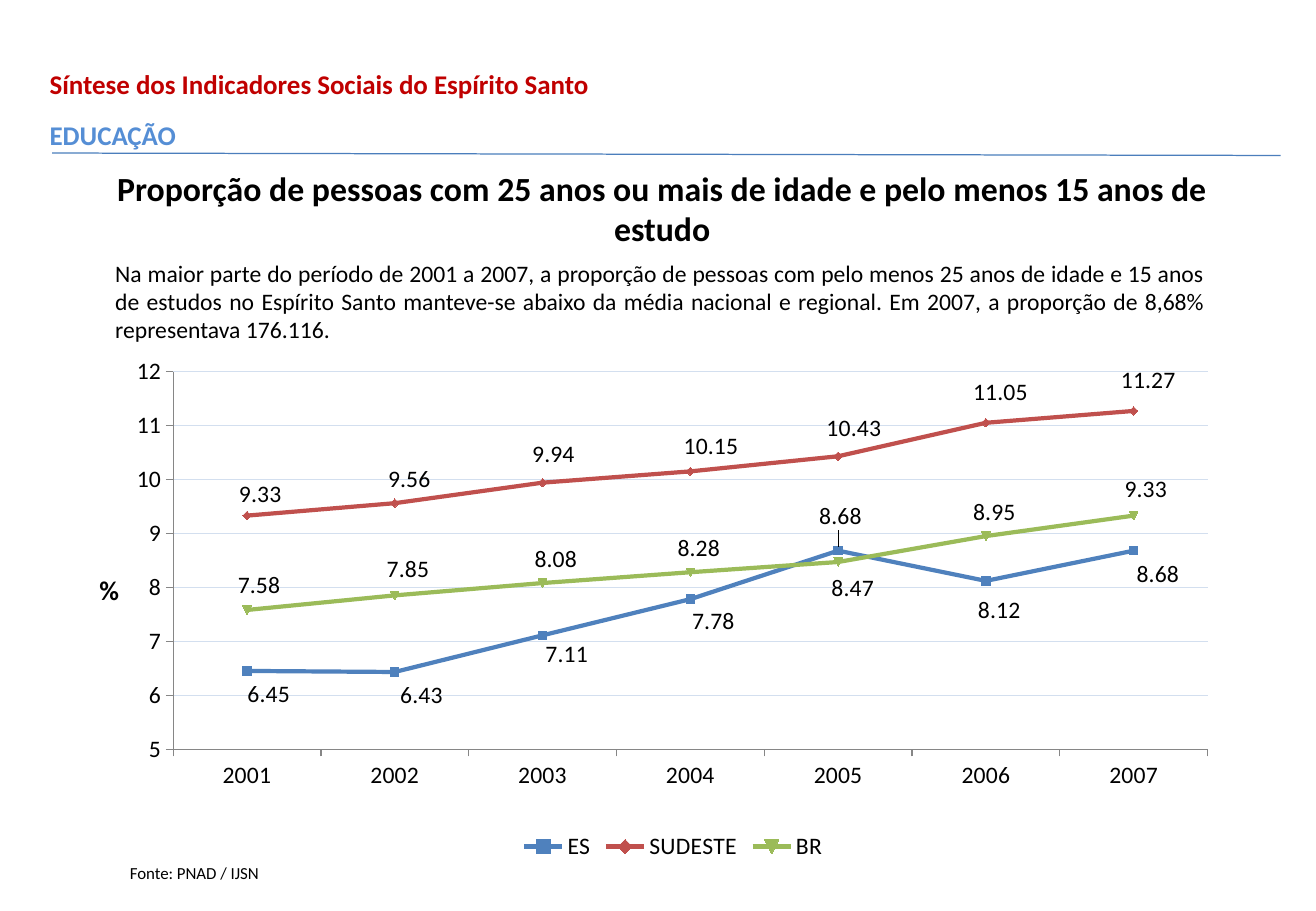
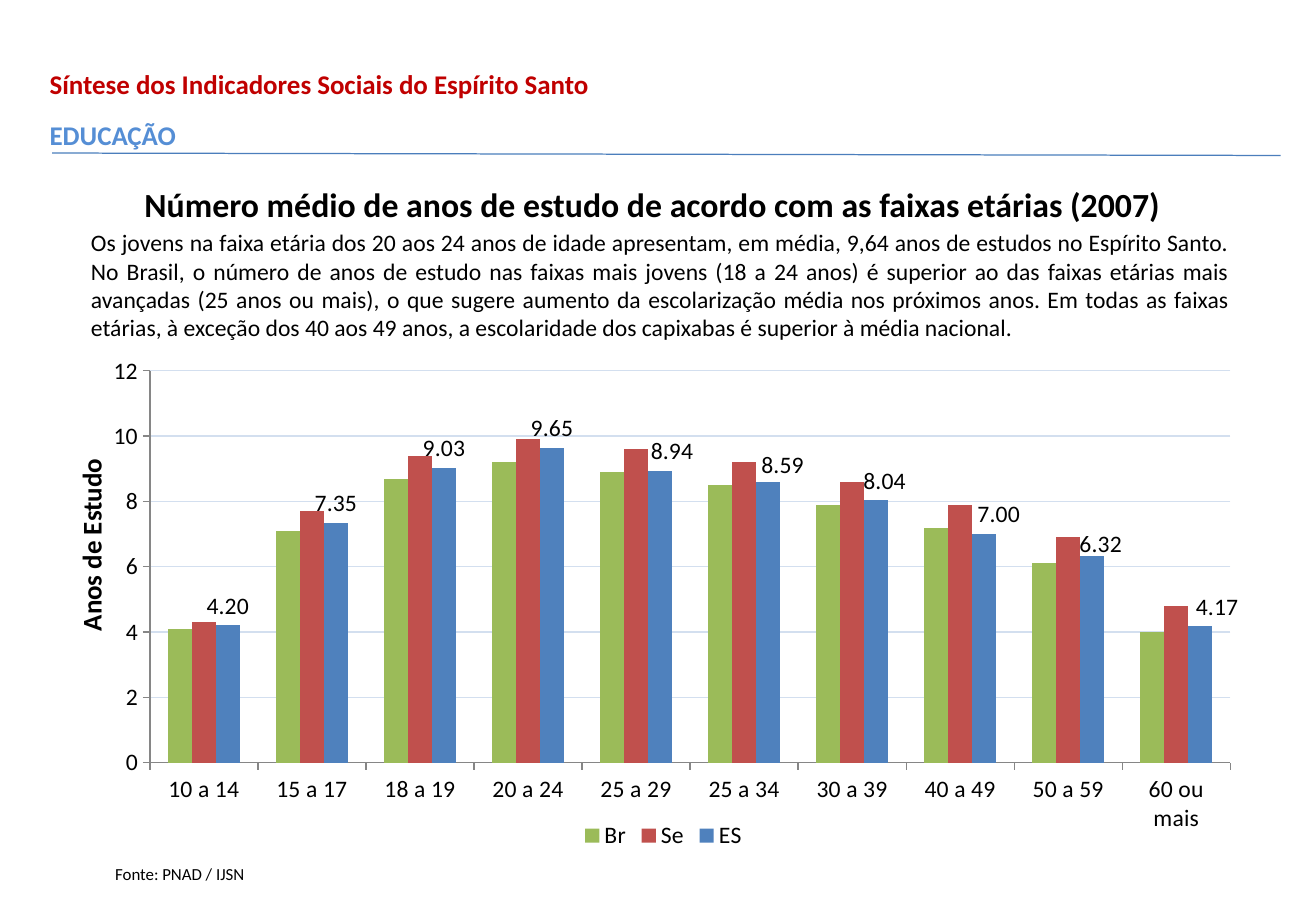
import lxml.etree
import pptx
import pptx.chart.data
import pptx.dml.color
import pptx.enum.chart
import pptx.enum.text
import pptx.oxml
import pptx.oxml.ns
import pptx.util

Inches = pptx.util.Inches
Pt = pptx.util.Pt
RGBColor = pptx.dml.color.RGBColor
PP_ALIGN = pptx.enum.text.PP_ALIGN
XL_CHART_TYPE = pptx.enum.chart.XL_CHART_TYPE
XL_LABEL_POSITION = pptx.enum.chart.XL_LABEL_POSITION
qn = pptx.oxml.ns.qn

FONT = "Calibri"
BLACK = RGBColor(0x00, 0x00, 0x00)
RED = RGBColor(0xC0, 0x00, 0x00)
SECTION_BLUE = RGBColor(0x55, 0x8E, 0xD5)
RULE_BLUE = RGBColor(0x4B, 0x7E, 0xBC)
GRID_BLUE = RGBColor(0xD3, 0xDF, 0xEF)
AXIS_GRAY = RGBColor(0x86, 0x86, 0x86)
SERIES_BLUE = RGBColor(0x4F, 0x81, 0xBD)
SERIES_RED = RGBColor(0xC0, 0x50, 0x4D)
SERIES_GREEN = RGBColor(0x9B, 0xBB, 0x59)

# Distance in inches from a data point to the centre of an unmoved label
LABEL_GAP = 0.16

YEARS = ["2001", "2002", "2003", "2004", "2005", "2006", "2007"]
GRADUATE_SHARE = [
    ("ES", SERIES_BLUE, [6.45, 6.43, 7.11, 7.78, 8.68, 8.12, 8.68]),
    ("SUDESTE", SERIES_RED, [9.33, 9.56, 9.94, 10.15, 10.43, 11.05, 11.27]),
    ("BR", SERIES_GREEN, [7.58, 7.85, 8.08, 8.28, 8.47, 8.95, 9.33]),
]
# Label centres relative to their points, in inches (right, down)
SHARE_LABELS = [
    [(0.18, 0.16), (0.22, 0.16), (0.2, 0.12), (0.19, 0.15),
     (0.02, -0.25), (0.11, 0.21), (0.2, 0.16)],
    [(0.11, -0.14), (0.12, -0.16), (0.09, -0.2), (0.17, -0.17),
     (0.13, -0.2), (0.12, -0.22), (0.12, -0.22)],
    [(0.1, -0.17), (0.11, -0.18), (0.11, -0.16), (0.07, -0.16),
     (0.12, 0.18), (0.07, -0.16), (0.1, -0.18)],
]

AGE_GROUPS = ["10 a 14", "15 a 17", "18 a 19", "20 a 24", "25 a 29",
              "25 a 34", "30 a 39", "40 a 49", "50 a 59", "60 ou mais"]
STUDY_YEARS = [
    ("Br", SERIES_GREEN, [4.1, 7.1, 8.7, 9.2, 8.9, 8.5, 7.9, 7.2, 6.1, 4]),
    ("Se", SERIES_RED, [4.3, 7.7, 9.4, 9.9, 9.6, 9.2, 8.6, 7.9, 6.9, 4.8]),
    ("ES", SERIES_BLUE,
     [4.2, 7.35, 9.03, 9.65, 8.94, 8.59, 8.04, 7, 6.32, 4.17]),
]
STUDY_LABELS = [(0, -0.16)] * 4 + [
    (0.1, -0.16), (0.12, -0.14), (0.07, -0.16),
    (0.12, -0.16), (0.07, -0.1), (0.14, -0.16)]


def style_font(font, size, color=BLACK, bold=False):
    font.name = FONT
    font.size = Pt(size)
    font.bold = bold
    font.color.rgb = color


def add_text(slide, box, text, size, bold=False, align=PP_ALIGN.LEFT,
             wrap=True, rotation=0):
    shape = slide.shapes.add_textbox(*map(Inches, box))
    shape.rotation = rotation
    shape.text_frame.word_wrap = wrap
    paragraph = shape.text_frame.paragraphs[0]
    paragraph.text = text
    paragraph.alignment = align
    style_font(paragraph.font, size, bold=bold)
    return shape


def add_header(slide):
    shape = add_text(slide, (0.31, 0.51, 10.52, 0.75),
                     "Síntese dos Indicadores Sociais do Espírito Santo", 16)
    style_font(shape.text_frame.paragraphs[0].font, 16, RED, True)
    section = shape.text_frame.add_paragraph()
    section.text = "EDUCAÇÃO"
    section.space_before = Pt(11)
    style_font(section.font, 16, SECTION_BLUE, True)

    rule = slide.shapes.add_connector(
        pptx.enum.shapes.MSO_CONNECTOR.STRAIGHT,
        Inches(0.43), Inches(1.26), Inches(10.54), Inches(1.28))
    rule.line.color.rgb = RULE_BLUE
    rule.line.width = Pt(0.75)
    lxml.etree.SubElement(rule._element.spPr, qn("a:effectLst"))


def add_content_slide(presentation, title, title_box):
    slide = presentation.slides.add_slide(presentation.slide_layouts[5])
    shape = slide.shapes.title
    shape.left, shape.top, shape.width, shape.height = map(Inches, title_box)
    frame = shape.text_frame
    frame.text = title
    frame.word_wrap = True
    frame.auto_size = pptx.enum.text.MSO_AUTO_SIZE.NONE
    frame.vertical_anchor = pptx.enum.text.MSO_ANCHOR.TOP
    frame.paragraphs[0].alignment = PP_ALIGN.CENTER
    style_font(frame.paragraphs[0].font, 20, bold=True)
    add_header(slide)
    return slide


def manual_layout(**settings):
    """Return a c:layout element with the given manual settings."""
    layout = pptx.oxml.parse_xml(
        "<c:layout %s><c:manualLayout/></c:layout>"
        % pptx.oxml.ns.nsdecls("c"))
    for name, value in settings.items():
        lxml.etree.SubElement(layout[0], qn("c:" + name)).set(
            "val", str(value))
    return layout


def set_plot_layout(chart, x, y, width, height):
    plot_area = chart._chartSpace.chart.plotArea
    for layout in plot_area.findall(qn("c:layout")):
        plot_area.remove(layout)
    plot_area.insert(0, manual_layout(
        layoutTarget="inner", xMode="edge", yMode="edge",
        x=x, y=y, w=width, h=height))


def style_axis(axis):
    axis.tick_labels.font.size = Pt(14)
    axis.major_tick_mark = pptx.enum.chart.XL_TICK_MARK.OUTSIDE
    axis.minor_tick_mark = pptx.enum.chart.XL_TICK_MARK.NONE
    axis.format.line.color.rgb = AXIS_GRAY
    axis.format.line.width = Pt(0.75)


def add_chart(slide, kind, box, categories, series_data, plot_box,
              minimum, step):
    data = pptx.chart.data.CategoryChartData(number_format="0.00")
    data.categories = categories
    for name, _, values in series_data:
        data.add_series(name, values)
    chart = slide.shapes.add_chart(kind, *map(Inches, box), data).chart
    chart.has_title = False
    style_font(chart.font, 10)
    chart.has_legend = True
    chart.legend.position = pptx.enum.chart.XL_LEGEND_POSITION.BOTTOM
    chart.legend.include_in_layout = False
    chart.legend.font.size = Pt(14)
    chart.plots[0].vary_by_categories = False
    set_plot_layout(chart, *plot_box)

    style_axis(chart.category_axis)
    axis = chart.value_axis
    style_axis(axis)
    axis.minimum_scale = minimum
    axis.maximum_scale = 12
    axis.major_unit = step
    axis.tick_labels.number_format = "0"
    axis.tick_labels.number_format_is_linked = False
    axis.has_major_gridlines = True
    axis.major_gridlines.format.line.color.rgb = GRID_BLUE
    axis.major_gridlines.format.line.width = Pt(0.75)
    return chart


def label_points(series, offsets, box, above, below=None):
    """Show each value with its label centre moved from the point."""
    _, _, chart_width, chart_height = box
    for index, (right, down) in enumerate(offsets):
        label = series.points[index].data_label
        label.position = above if down < 0 else below
        style_font(label.font, 14)
        element = series._element.xpath(
            'c:dLbls/c:dLbl[c:idx/@val="%d"]' % index)[0]
        gap = -LABEL_GAP if down < 0 else LABEL_GAP
        layout = manual_layout(x=round(right / chart_width, 4),
                               y=round((down - gap) / chart_height, 4))
        number_format = pptx.oxml.parse_xml(
            '<c:numFmt %s formatCode="0.00" sourceLinked="0"/>'
            % pptx.oxml.ns.nsdecls("c"))
        element.insert(1, layout)
        element.insert(2, number_format)


def add_share_slide(presentation):
    slide = add_content_slide(
        presentation,
        "Proporção de pessoas com 25 anos ou mais de idade e pelo menos "
        "15 anos de estudo", (0.46, 1.33, 9.98, 0.8))
    box = (0.81, 2.51, 9.46, 4.62)
    chart = add_chart(slide, XL_CHART_TYPE.LINE_MARKERS, box, YEARS,
                      GRADUATE_SHARE, (0.065, 0.119, 0.9, 0.673), 5, 1)
    for series, (_, color, _), offsets in zip(
            chart.plots[0].series, GRADUATE_SHARE, SHARE_LABELS):
        series.smooth = False
        series.format.line.color.rgb = color
        series.format.line.width = Pt(2.5)
        series.marker.size = 5
        series.marker.format.fill.solid()
        series.marker.format.fill.fore_color.rgb = color
        series.marker.format.line.color.rgb = color
        label_points(series, offsets, box,
                     XL_LABEL_POSITION.ABOVE, XL_LABEL_POSITION.BELOW)
    add_text(slide, (0.85, 2.08, 9.17, 0.81),
             "Na maior parte do período de 2001 a 2007, a proporção de "
             "pessoas com pelo menos 25 anos de idade e 15 anos de estudos "
             "no Espírito Santo manteve-se abaixo da média nacional e "
             "regional. Em 2007, a proporção de 8,68% representava 176.116.",
             14, align=PP_ALIGN.JUSTIFY)
    add_text(slide, (0.72, 4.67, 0.36, 0.37), "%", 16, bold=True, wrap=False)
    add_text(slide, (0.97, 7.05, 1.27, 0.27), "Fonte: PNAD / IJSN", 10,
             wrap=False)


def add_study_slide(presentation):
    slide = add_content_slide(
        presentation,
        "Número médio de anos de estudo de acordo com as faixas etárias "
        "(2007)", (0.33, 1.46, 10.08, 0.43))
    box = (0.58, 2.93, 9.76, 4.11)
    chart = add_chart(slide, XL_CHART_TYPE.COLUMN_CLUSTERED, box, AGE_GROUPS,
                      STUDY_YEARS, (0.067, 0.03, 0.911, 0.785), 0, 2)
    plot = chart.plots[0]
    plot.gap_width = 150
    plot.overlap = 0
    for series, (_, color, _) in zip(plot.series, STUDY_YEARS):
        series.format.fill.solid()
        series.format.fill.fore_color.rgb = color
    label_points(plot.series[-1], STUDY_LABELS, box,
                 XL_LABEL_POSITION.OUTSIDE_END)
    add_text(slide, (0.65, 1.83, 9.57, 1.04),
             "Os jovens na faixa etária dos 20 aos 24 anos de idade "
             "apresentam, em média, 9,64 anos de estudos no Espírito Santo. "
             "No Brasil, o número de anos de estudo nas faixas mais jovens "
             "(18 a 24 anos) é superior ao das faixas etárias mais avançadas "
             "(25 anos ou mais), o que sugere aumento da escolarização média "
             "nos próximos anos. Em todas as faixas etárias, à exceção dos "
             "40 aos 49 anos, a escolaridade dos capixabas é superior à "
             "média nacional.", 14, align=PP_ALIGN.JUSTIFY)
    add_text(slide, (-0.07, 4.29, 1.64, 0.37), "Anos de Estudo", 16,
             bold=True, wrap=False, rotation=270)
    add_text(slide, (0.85, 7.06, 1.27, 0.27), "Fonte: PNAD / IJSN", 10,
             wrap=False)


def main():
    presentation = pptx.Presentation()
    presentation.slide_width = Inches(10.83)
    presentation.slide_height = Inches(7.5)
    add_share_slide(presentation)
    add_study_slide(presentation)
    presentation.save("out.pptx")


if __name__ == "__main__":
    main()
